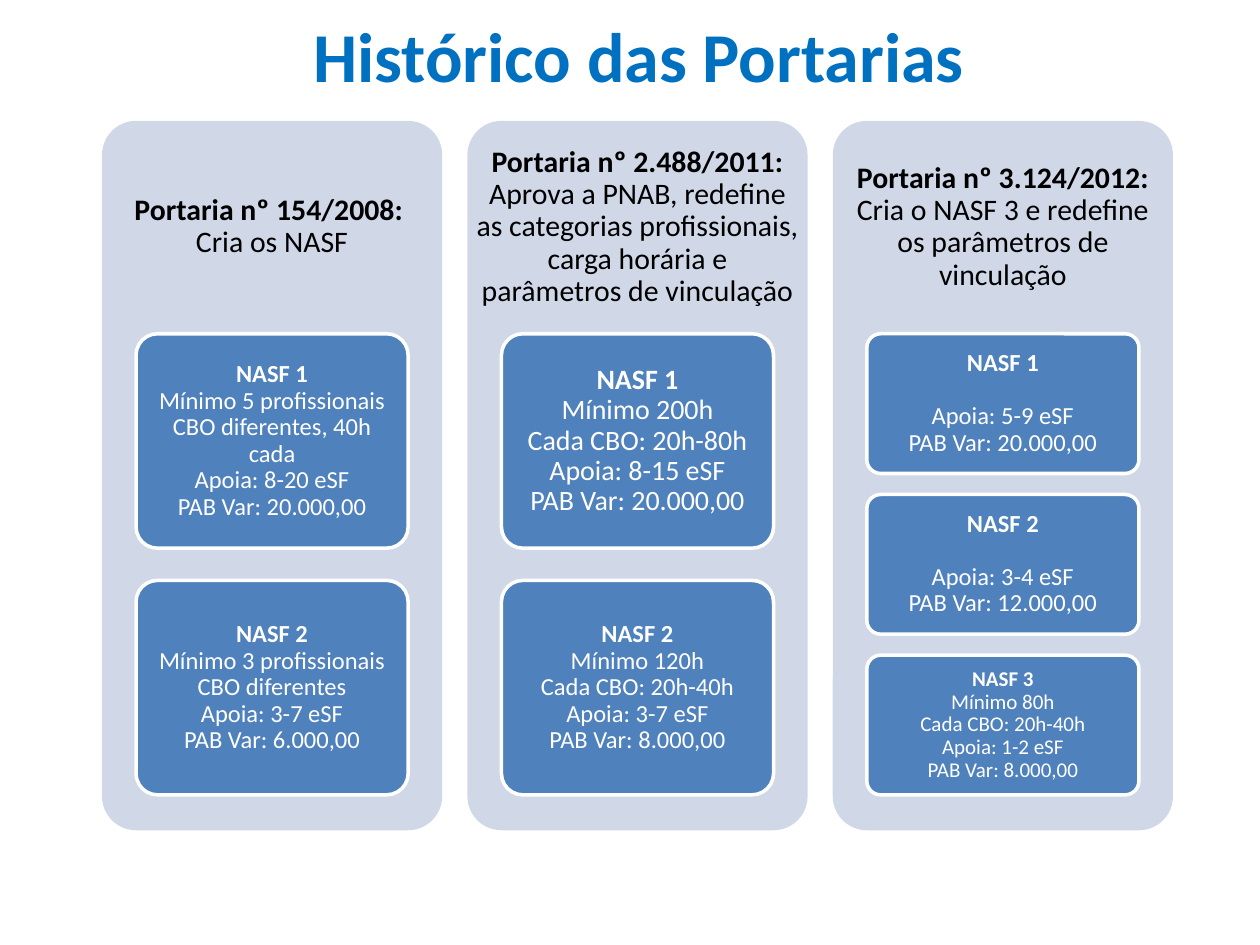
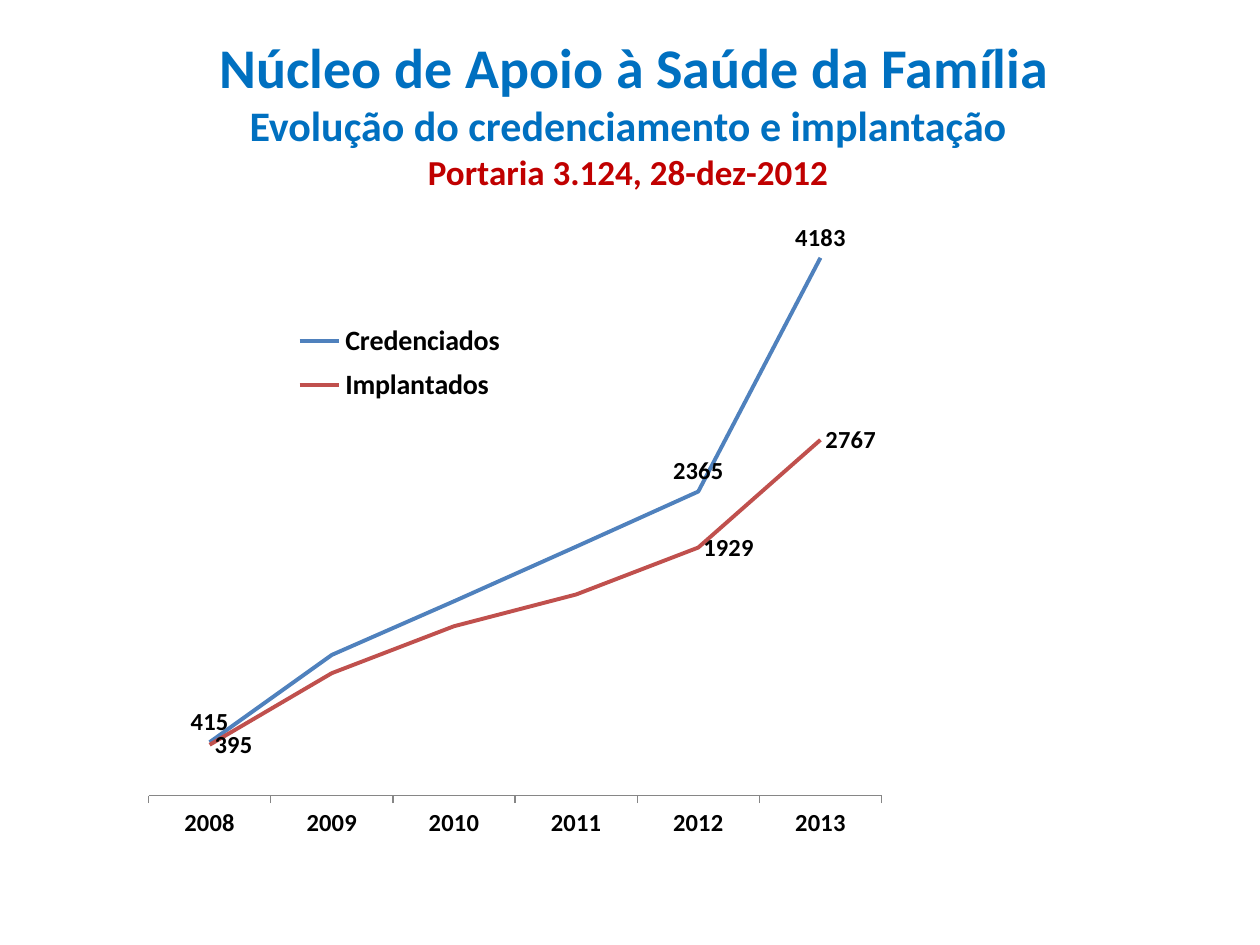
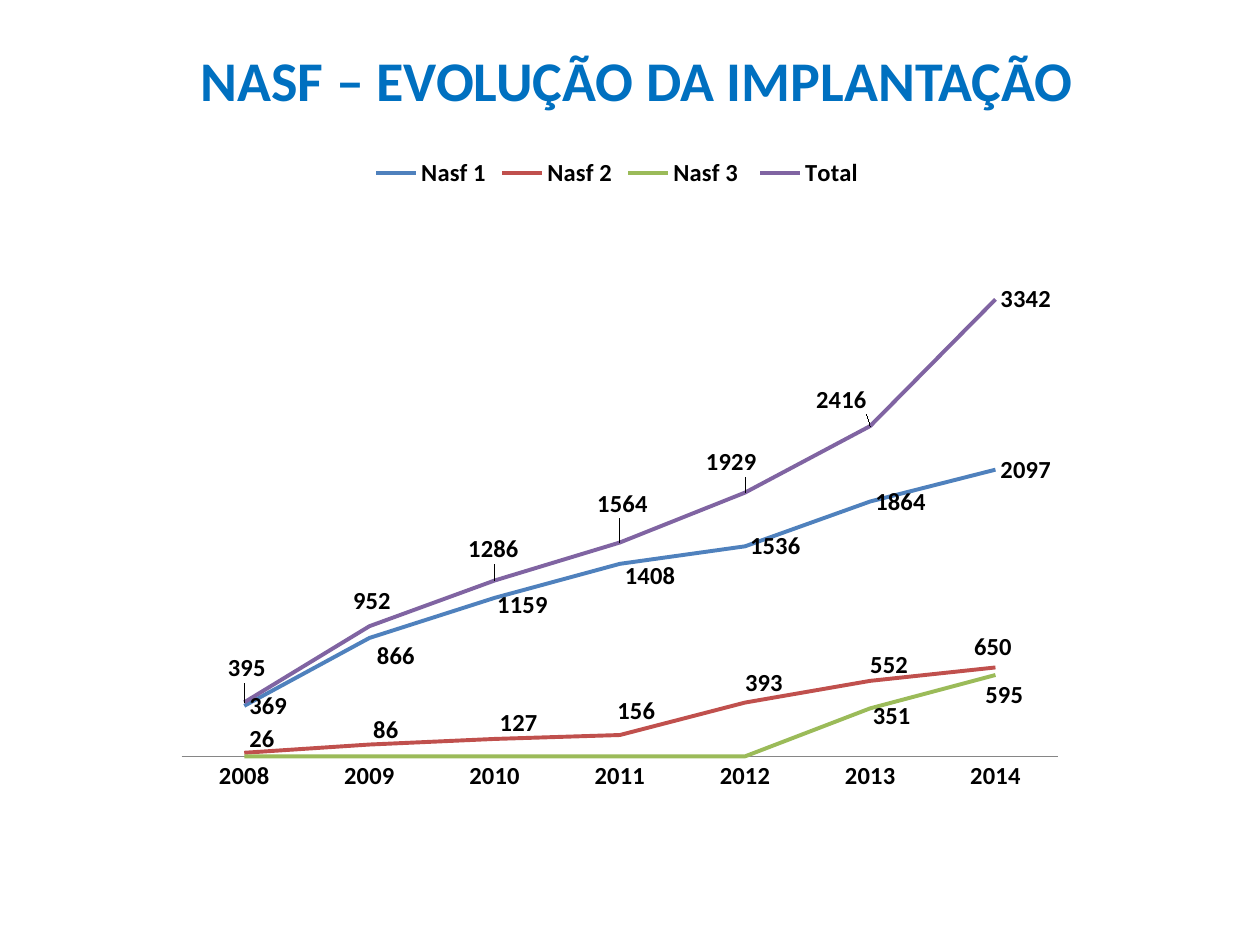
import pptx
import pptx.chart.data
import pptx.dml.color
import pptx.enum.chart
import pptx.enum.shapes
import pptx.enum.text
import pptx.oxml
import pptx.oxml.ns
import pptx.util

Inches, Pt = pptx.util.Inches, pptx.util.Pt
RGB = pptx.dml.color.RGBColor.from_string
Legend = pptx.enum.chart.XL_LEGEND_POSITION
Label = pptx.enum.chart.XL_LABEL_POSITION
Tick = pptx.enum.chart.XL_TICK_MARK
MIDDLE = pptx.enum.text.MSO_ANCHOR.MIDDLE
ROUNDED = pptx.enum.shapes.MSO_SHAPE.ROUNDED_RECTANGLE

COLORS = {
    "title": "0070C0", "decree": "C00000", "text": "000000", "white": "FFFFFF",
    "panel": "D0D8E8", "blue": "4F81BD", "red": "C0504D", "green": "9BBB59",
    "purple": "8064A2", "axis": "868686",
}
FONT = "Calibri"


def write(frame, paragraphs, margins, spacing=1.0, gap=0):
    """Fill a frame with centred paragraphs of (text, size, bold, colour) runs; \\v breaks a line."""
    frame.word_wrap = True
    for side, value in zip(("left", "top", "right", "bottom"), margins):
        setattr(frame, f"margin_{side}", Inches(value))
    for number, runs in enumerate(paragraphs):
        paragraph = frame.add_paragraph() if number else frame.paragraphs[0]
        paragraph.alignment = pptx.enum.text.PP_ALIGN.CENTER
        paragraph.line_spacing = spacing
        if number < len(paragraphs) - 1:
            paragraph.space_after = Pt(gap)
        for text, size, bold, color in runs:
            for row, line in enumerate(text.split("\v")):
                if row:
                    paragraph.add_line_break()
                if line:
                    run = paragraph.add_run()
                    run.text = line
                    for key, value in {"name": FONT, "size": Pt(size), "bold": bold}.items():
                        setattr(run.font, key, value)
                    run.font.color.rgb = RGB(COLORS[color])


def place(parent, index, x, y, size=None, edge=False):
    """Give a chart part a manual layout, in shares of the chart."""
    for old in parent.findall(pptx.oxml.ns.qn("c:layout")):
        parent.remove(old)
    parts = {}
    if edge:
        parts.update(xMode="edge", yMode="edge")
    parts.update(x=round(x, 4), y=round(y, 4))
    if size:
        parts.update(w=size[0], h=size[1])
    target = '<c:layoutTarget val="inner"/>' if parent.tag.endswith("plotArea") else ""
    body = "".join(f'<c:{key} val="{value}"/>' for key, value in parts.items())
    parent.insert(index, pptx.oxml.parse_xml(
        f'<c:layout {pptx.oxml.ns.nsdecls("c")}><c:manualLayout>{target}{body}'
        "</c:manualLayout></c:layout>"))


deck = pptx.Presentation()
deck.slide_width, deck.slide_height = Inches(10), Inches(7.5)

# Titles: box, indent of the first line, lines of (text, size, colour)
TITLES = [
    ((0, 0.05, 10, 0.78), 0.14, [("Histórico das Portarias", 40, "title")]),
    ((0.16, 0.21, 9.65, 1.38), 0.1, [
        ("Núcleo de Apoio à Saúde da Família", 32, "title"),
        ("Evolução do credenciamento e implantação", 24, "title"),
        ("Portaria 3.124, 28-dez-2012", 20, "decree"),
    ]),
    ((0, 0.31, 10, 1.18), 0.11, [("NASF – EVOLUÇÃO DA IMPLANTAÇÃO", 32, "title")]),
]
slides = []
for box, indent, lines in TITLES:
    slide = deck.slides.add_slide(deck.slide_layouts[6])
    frame = slide.shapes.add_textbox(*map(Inches, box)).text_frame
    write(frame, [[(text, size, True, color)] for text, size, color in lines],
          (0.1, 0.05, 0.1, 0.05))
    first_line = frame.paragraphs[0]._p.get_or_add_pPr()
    first_line.set("marL", str(Inches(indent)))
    first_line.set("indent", "0")
    slides.append(slide)

# Decrees: name, purpose, cards of (heading, body, size, gap after heading)
DECREES = [
    ("Portaria nº 154/2008: \v", "Cria os NASF", [
        ("NASF 1", "Mínimo 5 profissionais\vCBO diferentes, 40h cada\v"
                   "Apoia: 8-20 eSF\vPAB Var: 20.000,00", 14, 0),
        ("NASF 2", "Mínimo 3 profissionais CBO diferentes\v"
                   "Apoia: 3-7 eSF\vPAB Var: 6.000,00", 14, 0),
    ]),
    ("Portaria nº 2.488/2011: ", "Aprova a PNAB, redefine as categorias profissionais, "
                                 "carga horária e parâmetros de vinculação", [
        ("NASF 1", "Mínimo 200h\vCada CBO: 20h-80h\vApoia: 8-15 eSF\vPAB Var: 20.000,00", 16, 0),
        ("NASF 2", "Mínimo 120h\vCada CBO: 20h-40h\vApoia: 3-7 eSF\vPAB Var: 8.000,00", 14, 0),
    ]),
    ("Portaria nº 3.124/2012: ", "Cria o NASF 3 e redefine os parâmetros de vinculação", [
        ("NASF 1", "Apoia: 5-9 eSF\vPAB Var: 20.000,00", 14, 15),
        ("NASF 2", "Apoia: 3-4 eSF\vPAB Var: 12.000,00", 14, 15),
        ("NASF 3", "Mínimo 80h\vCada CBO: 20h-40h\vApoia: 1-2 eSF\vPAB Var: 8.000,00", 12, 0),
    ]),
]
LEFT, TOP, PANEL_W, PANEL_H, PITCH = 0.81, 0.96, 2.7, 5.63, 2.9
HEAD_H, CARDS_H, CARD_GAP = 0.3 * PANEL_H, 0.65 * PANEL_H, 0.15

shapes = slides[0].shapes
for column, (decree, purpose, cards) in enumerate(DECREES):
    left = LEFT + column * PITCH
    panel = shapes.add_shape(ROUNDED, *map(Inches, (left, TOP, PANEL_W, PANEL_H)))
    panel.adjustments[0] = 0.1
    panel.shadow.inherit = False
    panel.fill.solid()
    panel.fill.fore_color.rgb = RGB(COLORS["panel"])
    panel.line.fill.background()
    heading = shapes.add_textbox(*map(Inches, (left, TOP, PANEL_W, HEAD_H))).text_frame
    heading.vertical_anchor = MIDDLE
    write(heading, [[(decree, 17, True, "text"), (purpose, 17, False, "text")]],
          [0.07] * 4, spacing=0.9)

    card_h = CARDS_H / (len(cards) + CARD_GAP * (len(cards) - 1))
    for row, (team, rules, size, gap) in enumerate(cards):
        top = TOP + HEAD_H + row * card_h * (1 + CARD_GAP)
        card = shapes.add_shape(
            ROUNDED, *map(Inches, (left + 0.1 * PANEL_W, top, 0.8 * PANEL_W, card_h)))
        card.adjustments[0] = 0.1
        card.shadow.inherit = False
        card.fill.solid()
        card.fill.fore_color.rgb = RGB(COLORS["blue"])
        card.line.color.rgb = RGB(COLORS["white"])
        card.line.width = Pt(2)
        card.text_frame.vertical_anchor = MIDDLE
        title_run, rules_run = (team, size, True, "white"), (rules, size, False, "white")
        if gap:
            paragraphs = [[title_run], [rules_run]]
        else:
            paragraphs = [[(team + "\v", size, True, "white"), rules_run]]
        write(card.text_frame, paragraphs, (0.04, 0.03, 0.04, 0.03), spacing=0.9, gap=gap)

# Series: name, values, colour, label side, label shifts in inches (None hides a label)
UNLABELLED = dict.fromkeys((1, 2, 3))
CHARTS = [
    {
        "slide": slides[1], "box": (1.02, 1.62, 7.97, 5.16), "first_year": 2008,
        "plot": (0.02, 0.02, (0.73, 0.89)), "top": 4500, "tick": Tick.OUTSIDE,
        "legend": Legend.RIGHT, "legend_size": 16, "legend_at": (0.15, 0.17, (0.24, 0.15)),
        "series": [
            ("Credenciados", (415, 1094, 1511, 1936, 2365, 4183), "blue", Label.ABOVE, UNLABELLED),
            ("Implantados", (395, 952, 1317, 1564, 1929, 2767), "red", Label.RIGHT, UNLABELLED),
        ],
    },
    {
        "slide": slides[2], "box": (1.22, 1.14, 7.4, 5.23), "first_year": 2008,
        "plot": (0.03, 0.1, (0.94, 0.83)), "top": 4000, "tick": Tick.NONE,
        "legend": Legend.TOP, "legend_size": 14, "legend_at": None,
        "series": [
            ("Nasf 1", (369, 866, 1159, 1408, 1536, 1864, 2097), "blue", Label.RIGHT,
             {1: (0.02, 0.14), 2: (-0.02, 0.06), 3: (0, 0.1)}),
            ("Nasf 2", (26, 86, 127, 156, 393, 552, 650), "red", Label.RIGHT,
             {0: (0, -0.11), 1: (-0.01, -0.12), 2: (0, -0.13), 3: (-0.06, -0.19),
              4: (-0.04, -0.16), 5: (-0.04, -0.13), 6: (-0.21, -0.16)}),
            ("Nasf 3 ", (0, 0, 0, 0, 0, 351, 595), "green", Label.RIGHT,
             {**dict.fromkeys(range(5)), 5: (-0.02, 0.06), 6: (-0.12, 0.16)}),
            ("Total ", (395, 952, 1286, 1564, 1929, 2416, 3342), "purple", Label.RIGHT,
             {0: (-0.17, -0.27), 1: (-0.17, -0.2), 2: (-0.25, -0.25), 3: (-0.22, -0.31),
              4: (-0.35, -0.24), 5: (-0.47, -0.21)}),
        ],
    },
]
LABEL_FONT = {"name": FONT, "size": Pt(14), "bold": True}

for plan in CHARTS:
    data = pptx.chart.data.CategoryChartData()
    years = len(plan["series"][0][1])
    data.categories = [str(plan["first_year"] + year) for year in range(years)]
    for name, values, *_ in plan["series"]:
        data.add_series(name, values)
    chart = plan["slide"].shapes.add_chart(
        pptx.enum.chart.XL_CHART_TYPE.LINE, *map(Inches, plan["box"]), data).chart
    chart.has_title = False
    chart.has_legend = True
    chart.legend.position = plan["legend"]
    chart.legend.include_in_layout = False

    values_axis, years_axis = chart.value_axis, chart.category_axis
    for key, value in {"visible": False, "has_major_gridlines": False,
                       "minimum_scale": 0, "maximum_scale": plan["top"]}.items():
        setattr(values_axis, key, value)
    years_axis.major_tick_mark = plan["tick"]
    years_axis.format.line.color.rgb = RGB(COLORS["axis"])
    years_axis.format.line.width = Pt(0.75)
    fonts = [(chart.font, 14), (chart.legend.font, plan["legend_size"]),
             (years_axis.tick_labels.font, 14)]

    width, height = plan["box"][2:]
    chart.plots[0].vary_by_categories = False
    for series, (_, _, color, side, shifts) in zip(chart.plots[0].series, plan["series"]):
        series.smooth = False
        series.marker.style = pptx.enum.chart.XL_MARKER_STYLE.NONE
        series.format.line.color.rgb = RGB(COLORS[color])
        series.format.line.width = Pt(2.25)
        labels = series.data_labels
        labels.show_value = True
        labels.position = side
        fonts.append((labels.font, 14))
        for point, shift in shifts.items():
            label = series.points[point].data_label
            label.position = side
            node = series._element.xpath(f'c:dLbls/c:dLbl[c:idx/@val="{point}"]')[0]
            if shift:
                fonts.append((label.font, 14))
                place(node, 1, shift[0] / width, shift[1] / height)
            else:
                for child in list(node)[1:]:
                    node.remove(child)
                node.append(pptx.oxml.parse_xml(
                    f'<c:delete {pptx.oxml.ns.nsdecls("c")} val="1"/>'))

    for font, size in fonts:
        for key, value in {**LABEL_FONT, "size": Pt(size)}.items():
            setattr(font, key, value)
        font.color.rgb = RGB(COLORS["text"])
    place(chart._chartSpace.xpath("c:chart/c:plotArea")[0], 0, *plan["plot"], edge=True)
    if plan["legend_at"]:
        place(chart._chartSpace.xpath("c:chart/c:legend")[0], 1, *plan["legend_at"], edge=True)

deck.save("out.pptx")
